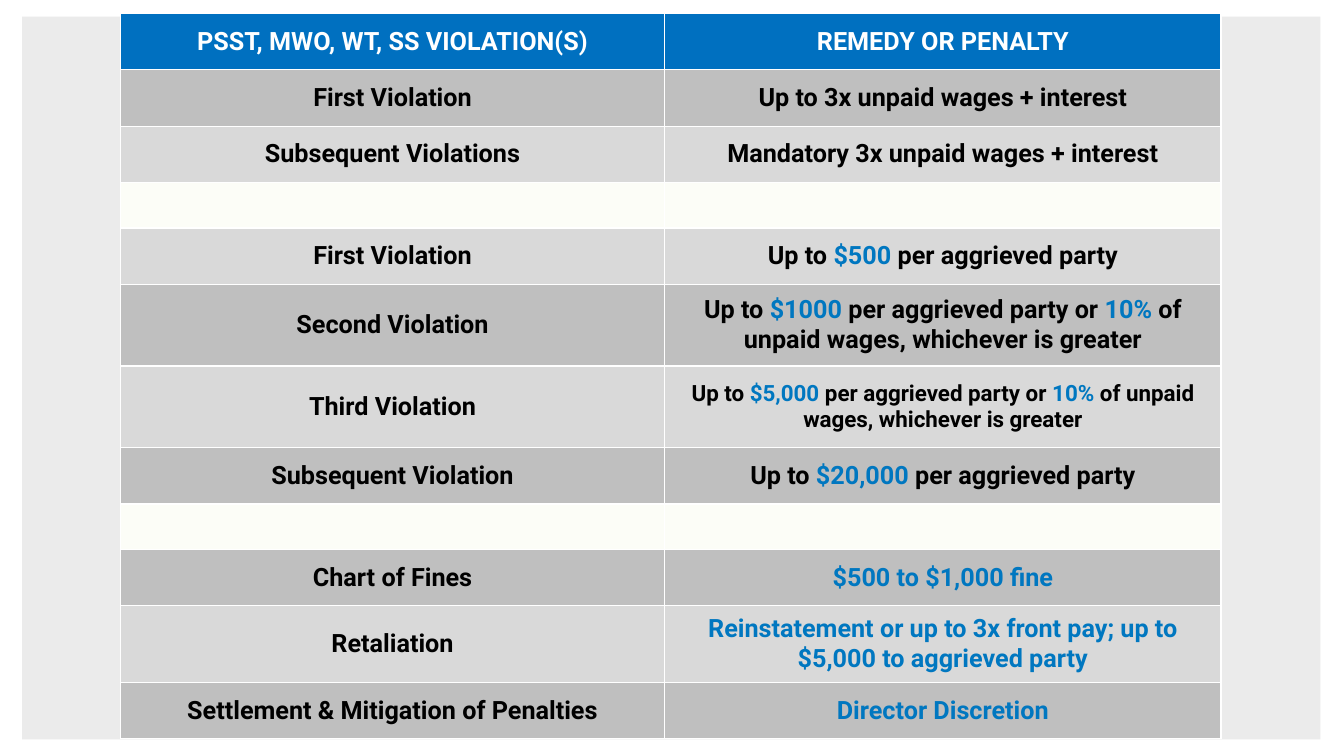
from lxml.etree import SubElement
from pptx import Presentation
from pptx.dml.color import RGBColor
from pptx.enum.shapes import MSO_SHAPE as SHAPE
from pptx.enum.text import MSO_ANCHOR as ANCHOR, PP_ALIGN as ALIGN
from pptx.oxml.ns import qn
from pptx.util import Pt

COLORS = {
    "panel": "EBEBEB", "header": "0070C0", "dark": "BFBFBF", "light": "D9D9D9",
    "gap": "FCFDF7", "border": "FFFFFF", "title": "FFFFFF", "text": "000000",
    "accent": "0077C0",
}
FONT = "Roboto"
SINGLE, DOUBLE, SPACER = 40.3, 58.3, 32.4
COL_WIDTHS = (388.8, 397.4)

# fill, row height, violation, remedy, remedy size; amounts between asterisks are accented
ROWS = [
    ("header", SINGLE, "PSST, MWO, WT, SS VIOLATION(S)", "REMEDY OR PENALTY", 18),
    ("dark", SINGLE, "First Violation", "Up to 3x unpaid wages + interest", 18),
    ("light", SINGLE, "Subsequent Violations", "Mandatory 3x unpaid wages + interest", 18),
    ("gap", SPACER, "", "", 18),
    ("light", SINGLE, "First Violation", "Up to *$500* per aggrieved party", 18),
    ("dark", DOUBLE, "Second Violation",
     "Up to *$1000* per aggrieved party or *10%* of unpaid wages, whichever is greater", 18),
    ("light", DOUBLE, "Third Violation",
     "Up to *$5,000* per aggrieved party or *10%* of unpaid wages, whichever is greater", 16),
    ("dark", SINGLE, "Subsequent Violation", "Up to *$20,000* per aggrieved party", 18),
    ("gap", SPACER, "", "", 18),
    ("dark", SINGLE, "Chart of Fines", "*$500 to $1,000 fine*", 18),
    ("light", 54.7, "Retaliation",
     "*Reinstatement or up to 3x front pay; up to $5,000 to aggrieved party*", 18),
    ("dark", SINGLE, "Settlement & Mitigation of Penalties", "*Director Discretion*", 18),
]


def rgb(name):
    return RGBColor.from_string(COLORS[name])


def add_borders(cell):
    """Add the four side lines; call before the cell gets its fill."""
    tc_pr = cell._tc.get_or_add_tcPr()
    for side in ("a:lnL", "a:lnR", "a:lnT", "a:lnB"):
        ln = SubElement(tc_pr, qn(side), w=str(Pt(1)))
        fill = SubElement(ln, qn("a:solidFill"))
        SubElement(fill, qn("a:srgbClr"), val=COLORS["border"])


def fill_cell(cell, text, size, fill):
    add_borders(cell)
    cell.fill.solid()
    cell.fill.fore_color.rgb = rgb(fill)
    cell.vertical_anchor = ANCHOR.MIDDLE
    cell.margin_left = cell.margin_right = Pt(5)
    cell.margin_top = cell.margin_bottom = Pt(5)
    p = cell.text_frame.paragraphs[0]
    p.alignment = ALIGN.CENTER
    p.font.name, p.font.size, p.font.bold = FONT, Pt(size), True
    p.font.color.rgb = rgb("title" if fill == "header" else "text")
    for i, part in enumerate(text.split("*")):
        if part:
            r = p.add_run()
            r.text = part
            if i % 2:
                r.font.color.rgb = rgb("accent")


prs = Presentation()
prs.slide_width, prs.slide_height = Pt(960), Pt(540)
s = prs.slides.add_slide(prs.slide_layouts[6])

panel = s.shapes.add_shape(SHAPE.RECTANGLE, Pt(15.8), Pt(12), Pt(927.4), Pt(516.2))
panel.shadow.inherit = False
panel.fill.solid()
panel.fill.fore_color.rgb = rgb("panel")
panel.line.fill.background()

table = s.shapes.add_table(
    len(ROWS), len(COL_WIDTHS), Pt(86), Pt(9.6),
    Pt(sum(COL_WIDTHS)), Pt(sum(row[1] for row in ROWS))).table
table.horz_banding = False
for column, width in zip(table.columns, COL_WIDTHS):
    column.width = Pt(width)
for i, (fill, height, violation, remedy, size) in enumerate(ROWS):
    table.rows[i].height = Pt(height)
    fill_cell(table.cell(i, 0), violation, 18, fill)
    fill_cell(table.cell(i, 1), remedy, size, fill)

prs.save("out.pptx")
